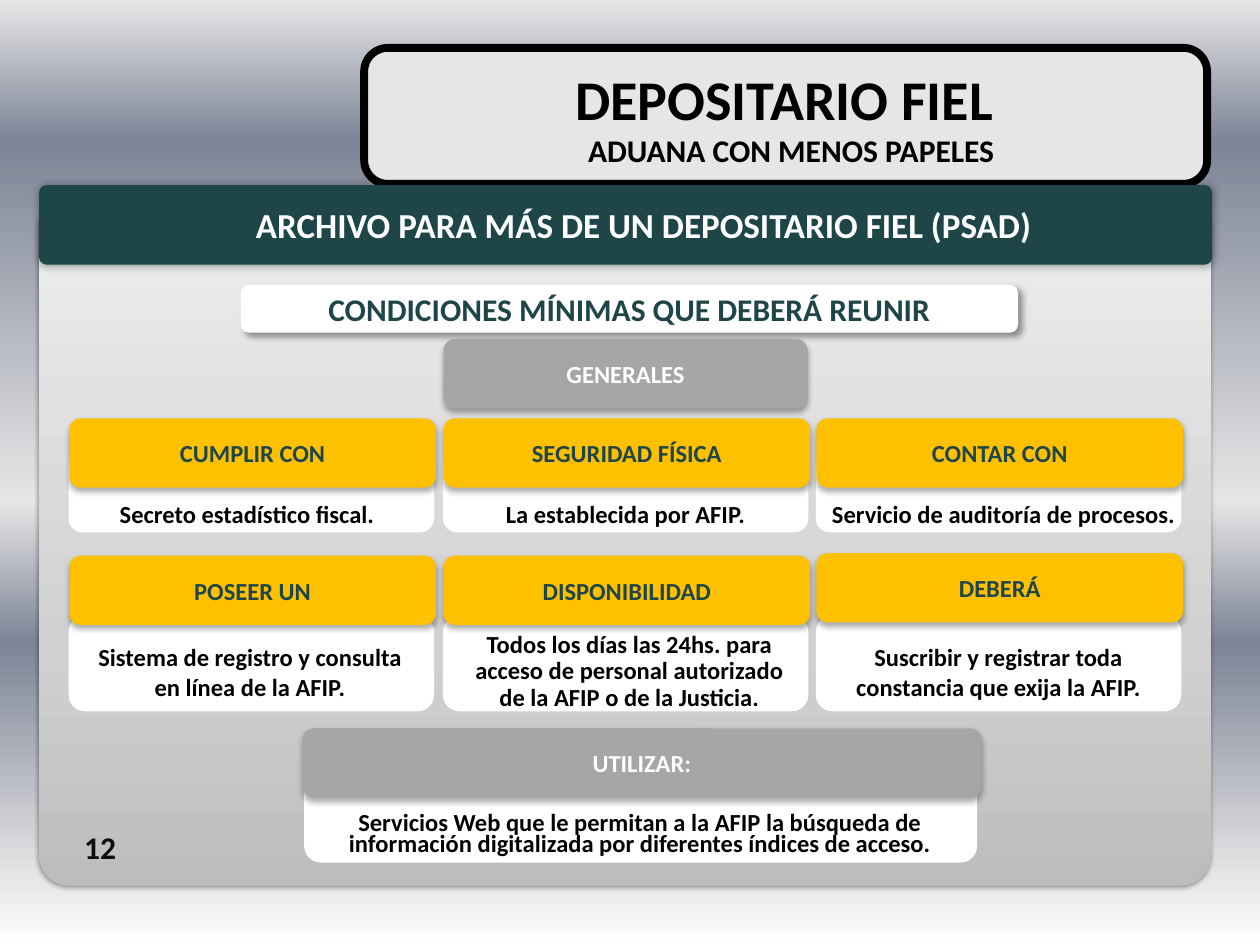
from dataclasses import dataclass
from typing import NamedTuple, Optional

from lxml import etree
from pptx import Presentation
from pptx.dml.color import RGBColor
from pptx.enum.shapes import MSO_SHAPE
from pptx.enum.text import MSO_ANCHOR, PP_ALIGN
from pptx.oxml.ns import qn
from pptx.util import Emu, Pt

ROUNDED = MSO_SHAPE.ROUNDED_RECTANGLE
CENTER, RIGHT = PP_ALIGN.CENTER, PP_ALIGN.RIGHT
TOP, MIDDLE = MSO_ANCHOR.TOP, MSO_ANCHOR.MIDDLE
PX = 9144  # 100 px to the inch
FONT = "Calibri"
COLORS = {
    "black": "000000", "ink": "0D0D0D", "white": "FFFFFF", "teal": "1E4649",
    "amber": "FFC000", "gray": "A6A6A6", "silver": "E6E6E6", "steel": "7D8496",
    "panel_dark": "BDBDBD", "panel_mid": "D1D1D1", "panel_light": "EEEEEE",
}


class Box(NamedTuple):
    left: int
    top: int
    width: int
    height: int


class Shadow(NamedTuple):
    opacity: int
    blur: float
    distance: float
    direction: int


@dataclass
class Card:
    heading: str
    heading_box: Box
    body: list[str]
    body_box: Box
    text_box: Box
    heading_fill: str = "amber"
    heading_color: str = "teal"
    line_spacing: Optional[object] = None


HEADING_SHADOW = Shadow(32, 3.5, 2.2, 90)
COLUMNS = (55, 352, 648)
BODY_WIDTH, HEADING_WIDTH, HEADING_HEIGHT = 289, 291, 55


def grid_card(column: int, row: int, heading: str, body: list[str], text_box: Box,
              heading_top: int, line_spacing: Optional[object] = None) -> Card:
    left = COLUMNS[column]
    body_top, body_height = ((359, 63), (489, 75))[row]
    return Card(heading, Box(left, heading_top, HEADING_WIDTH, HEADING_HEIGHT), body,
                Box(left, body_top, BODY_WIDTH, body_height), text_box,
                line_spacing=line_spacing)


CARDS = [
    grid_card(0, 0, "CUMPLIR CON", ["Secreto estadístico fiscal."],
              Box(75, 391, 242, 34), 332),
    grid_card(1, 0, "SEGURIDAD FÍSICA", ["La establecida por AFIP."],
              Box(352, 391, 289, 34), 332),
    grid_card(2, 0, "CONTAR CON", ["Servicio de auditoría de procesos."],
              Box(648, 391, 297, 34), 332),
    grid_card(0, 1, "POSEER UN", ["Sistema de registro y consulta en línea de la AFIP."],
              Box(62, 505, 273, 57), 441),
    grid_card(1, 1, "DISPONIBILIDAD",
              ["Todos los días las 24hs. para acceso de personal autorizado",
               "de la AFIP o de la Justicia."],
              Box(359, 497, 281, 73), 441, Pt(15)),
    grid_card(2, 1, "DEBERÁ", ["Suscribir y registrar toda constancia que exija la AFIP."],
              Box(656, 505, 273, 57), 439),
    Card("UTILIZAR:", Box(240, 578, 539, HEADING_HEIGHT),
         ["Servicios Web que le permitan a la AFIP la búsqueda de información "
          "digitalizada por diferentes índices de acceso."],
         Box(242, 609, 533, 75), Box(266, 641, 484, 45), "gray", "white", 0.73),
]


def color(name: str) -> RGBColor:
    return RGBColor.from_string(COLORS[name])


def emu(box: Box) -> list[Emu]:
    return [Emu(value * PX) for value in box]


def add_color(parent, name: str):
    return etree.SubElement(parent, qn("a:srgbClr"), val=COLORS[name])


def add_shadow(shape, shadow: Shadow) -> None:
    effects = shape.element.spPr.find(qn("a:effectLst"))
    outer = etree.SubElement(
        effects, qn("a:outerShdw"), blurRad=str(Pt(shadow.blur)),
        dist=str(Pt(shadow.distance)), dir=str(shadow.direction * 60000),
        algn="ctr", rotWithShape="0")
    etree.SubElement(add_color(outer, "black"), qn("a:alpha"),
                     val=str(shadow.opacity * 1000))


def fill_gradient(shape, stops: list[tuple[int, str]], angle: int) -> None:
    """Replace the stops; the angle runs clockwise in degrees."""
    shape.fill.gradient()
    gradient = shape.element.spPr.find(qn("a:gradFill"))
    stop_list = gradient.find(qn("a:gsLst"))
    for stop in list(stop_list):
        stop_list.remove(stop)
    for position, name in stops:
        add_color(etree.SubElement(stop_list, qn("a:gs"), pos=str(position * 1000)), name)
    gradient.find(qn("a:lin")).set("ang", str(angle * 60000))


def add_rounded(slide, box: Box, fill: Optional[str] = None, line: Optional[str] = None,
                line_width: float = 0.75, adjustment: Optional[float] = None,
                shadow: Optional[Shadow] = None):
    shape = slide.shapes.add_shape(ROUNDED, *emu(box))
    shape.shadow.inherit = False
    if adjustment is not None:
        shape.adjustments[0] = adjustment
    if fill:
        shape.fill.solid()
        shape.fill.fore_color.rgb = color(fill)
    if line:
        shape.line.color.rgb = color(line)
        shape.line.width = Pt(line_width)
    else:
        shape.line.fill.background()
    if shadow:
        add_shadow(shape, shadow)
    return shape


def write_text(shape, lines: list[str], sizes: list[int], color_name: str,
               anchor=MIDDLE, alignment=CENTER, line_spacing=None,
               indents: tuple[int, ...] = ()) -> None:
    """Write one paragraph a line; sizes and indents go with the lines."""
    frame = shape.text_frame
    frame.word_wrap = True
    frame.vertical_anchor = anchor
    for index, line in enumerate(lines):
        paragraph = frame.paragraphs[0] if index == 0 else frame.add_paragraph()
        paragraph.alignment = alignment
        if line_spacing is not None:
            paragraph.line_spacing = line_spacing
        if indents:
            properties = paragraph._p.get_or_add_pPr()
            properties.set("marL", str(indents[index] * PX))
            properties.set("indent", "0")
        run = paragraph.add_run()
        run.text = line
        run.font.name = FONT
        run.font.size = Pt(sizes[index])
        run.font.bold = True
        run.font.color.rgb = color(color_name)


def add_heading(slide, text: str, box: Box, fill: str, text_color: str) -> None:
    shape = add_rounded(slide, box, fill, shadow=HEADING_SHADOW)
    shape.text_frame.margin_top = shape.text_frame.margin_bottom = 0
    write_text(shape, [text], [14], text_color)


def add_card(slide, card: Card) -> None:
    add_rounded(slide, card.body_box, "white", line="white")
    text_box = slide.shapes.add_textbox(*emu(card.text_box))
    write_text(text_box, card.body, [14] * len(card.body), "black", TOP,
               line_spacing=card.line_spacing)
    add_heading(slide, card.heading, card.heading_box, card.heading_fill, card.heading_color)


def add_backdrop(slide) -> None:
    backdrop = add_rounded(slide, Box(0, 0, 1000, 750), adjustment=0)
    fill_gradient(backdrop, [(0, "white"), (7, "silver"), (32, "steel"), (47, "silver"),
                             (85, "steel"), (100, "silver")], 270)
    panel = add_rounded(slide, Box(31, 156, 930, 547), adjustment=0.044,
                        shadow=Shadow(38, 3.1, 1.6, 90))
    fill_gradient(panel, [(0, "panel_dark"), (35, "panel_mid"), (100, "panel_light")], 270)
    add_rounded(slide, Box(289, 38, 669, 108), "silver", line="black", line_width=4.5,
                adjustment=0.174)


def main() -> None:
    presentation = Presentation()
    presentation.slide_width, presentation.slide_height = Emu(1000 * PX), Emu(750 * PX)
    slide = presentation.slides.add_slide(presentation.slide_layouts[5])

    add_backdrop(slide)
    conditions = add_rounded(slide, Box(191, 226, 617, 38), "white",
                             shadow=Shadow(40, 4, 3, 45))
    write_text(conditions, ["CONDICIONES MÍNIMAS QUE DEBERÁ REUNIR"], [18], "teal")
    add_heading(slide, "GENERALES", Box(352, 269, 289, HEADING_HEIGHT), "gray", "white")
    for card in CARDS:
        add_card(slide, card)

    banner = add_rounded(slide, Box(31, 147, 931, 63), "teal", adjustment=0.091,
                         shadow=Shadow(40, 5, 0, 0))
    write_text(banner, ["ARCHIVO PARA MÁS DE UN DEPOSITARIO FIEL (PSAD)"], [20], "white",
               indents=(29,))

    title = slide.shapes.title
    title.left, title.top, title.width, title.height = emu(Box(370, 46, 505, 94))
    write_text(title, ["DEPOSITARIO FIEL", "ADUANA CON MENOS PAPELES"], [32, 18], "black",
               TOP, indents=(0, 11))
    title.element.getparent().append(title.element)  # bring to front

    page_number = slide.shapes.add_textbox(*emu(Box(47, 648, 55, 48)))
    write_text(page_number, ["12"], [18], "ink", alignment=RIGHT)
    presentation.save("out.pptx")


if __name__ == "__main__":
    main()
